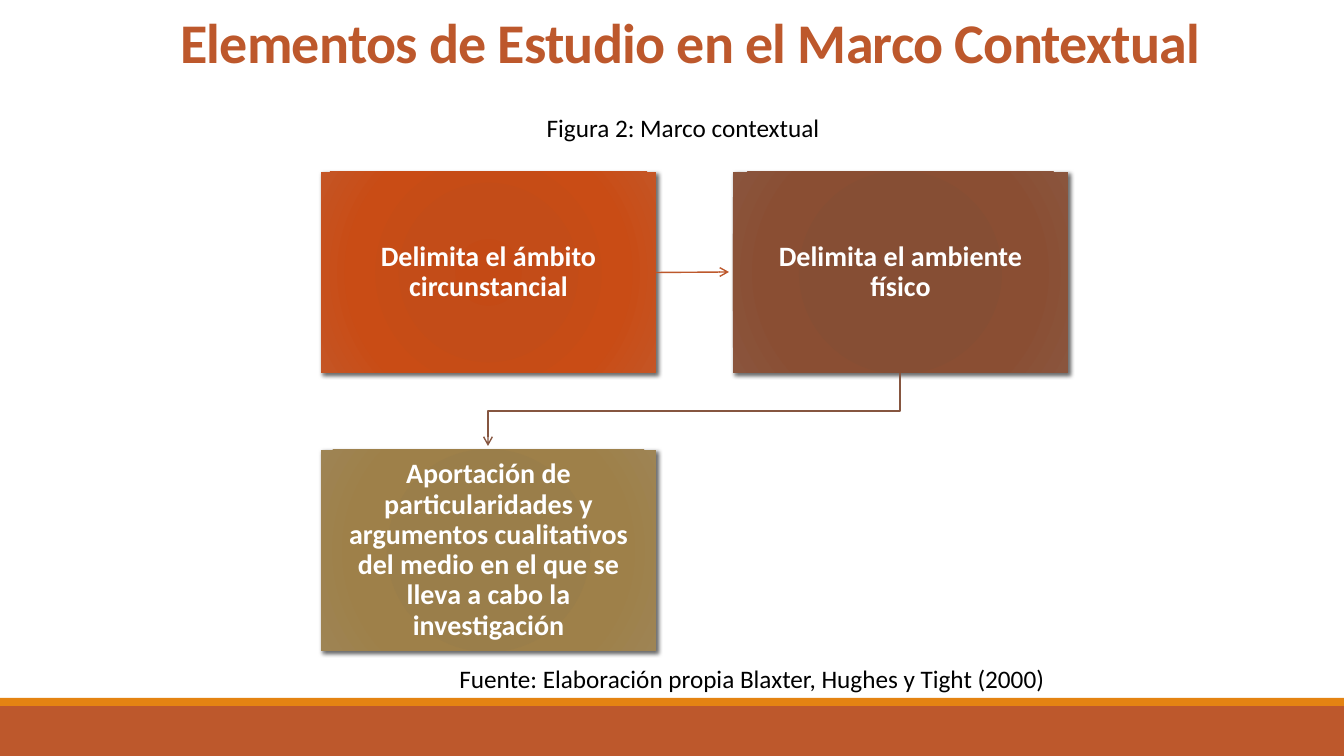
from lxml import etree
from pptx import Presentation
from pptx.dml.color import RGBColor
from pptx.enum.shapes import MSO_CONNECTOR, MSO_SHAPE
from pptx.enum.text import MSO_ANCHOR, MSO_AUTO_SIZE, PP_ALIGN
from pptx.oxml import parse_xml
from pptx.oxml.ns import nsdecls, qn
from pptx.util import Pt

WIDTH, HEIGHT = 1344, 756
SCALE = 12192000 / WIDTH
COLORS = {
    "rust": "BD582C", "orange": "E48312", "brown": "865640",
    "white": "FFFFFF", "black": "000000",
}
GRADIENTS = {
    "red": ("C44A15", "C34C18", "C94C15", "C45525"),
    "brown": ("874C32", "864E34", "8A4E33", "8A553D"),
    "olive": ("9A7D48", "9A7E4A", "9E8049", "9E8454"),
}
STOPS = (0, 34, 70, 100)
STEPS = (
    ("Delimita el ámbito circunstancial", "red"),
    ("Delimita el ambiente físico", "brown"),
    ("Aportación de particularidades y argumentos cualitativos del medio "
     "en el que se lleva a cabo la investigación", "olive"),
)
STEP_WIDTH, STEP_HEIGHT, COLUMN_PITCH, ROW_PITCH = 335, 201, 412, 278
ARROW_GAP = 4


def px(value):
    return round(value * SCALE)


def place(shape, box):
    for name, value in zip(("left", "top", "width", "height"), box):
        setattr(shape, name, px(value))


def write(shape, text, size, color, bold=False, align=PP_ALIGN.CENTER,
          anchor=MSO_ANCHOR.MIDDLE, spacing=1.0, margins=None):
    """Fill the shape with one formatted paragraph and return its run."""
    frame = shape.text_frame
    frame_format = {"word_wrap": True, "auto_size": MSO_AUTO_SIZE.NONE,
                    "vertical_anchor": anchor}
    if margins is not None:
        for side in ("left", "top", "right", "bottom"):
            frame_format[f"margin_{side}"] = px(margins)
    for name, value in frame_format.items():
        setattr(frame, name, value)
    paragraph = frame.paragraphs[0]
    paragraph.alignment, paragraph.line_spacing = align, spacing
    run = paragraph.add_run()
    run.text = text
    for name, value in {"name": "Calibri", "size": Pt(size), "bold": bold}.items():
        setattr(run.font, name, value)
    run.font.color.rgb = RGBColor.from_string(COLORS[color])
    return run


def add_title(slide, box):
    title = slide.shapes.title
    place(title, box)
    run = write(title, "Elementos de Estudio en el Marco Contextual", 40, "rust", bold=True,
                align=PP_ALIGN.LEFT, anchor=MSO_ANCHOR.BOTTOM, spacing=0.85)
    run.font._element.set("spc", "-50")


def add_caption(slide, box, text):
    caption = slide.shapes.add_textbox(*map(px, box))
    write(caption, text, 18, "black")


def add_footer(slide, box):
    left, top, width, height = box
    stripe = 8
    bands = (("rust", top + stripe, height - stripe), ("orange", top, stripe))
    for color, band_top, band_height in bands:
        band = slide.shapes.add_shape(
            MSO_SHAPE.RECTANGLE, *map(px, (left, band_top, width, band_height)))
        band.shadow.inherit = False
        band.fill.solid()
        band.fill.fore_color.rgb = RGBColor.from_string(COLORS[color])
        band.line.fill.background()


def apply_gradient(shape, colors):
    """Give the shape a circular gradient and a soft diagonal shadow."""
    shape.fill.background()
    properties = shape._element.spPr
    stops = "".join(
        f'<a:gs pos="{stop * 1000}"><a:srgbClr val="{color}"/></a:gs>'
        for stop, color in zip(STOPS, colors))
    gradient = parse_xml(
        f'<a:gradFill {nsdecls("a")} rotWithShape="1"><a:gsLst>{stops}</a:gsLst>'
        '<a:path path="circle"><a:fillToRect l="100000" t="100000" r="100000" b="100000"/>'
        '</a:path></a:gradFill>')
    properties.replace(properties.find(qn("a:noFill")), gradient)
    shape.shadow.inherit = False
    properties.find(qn("a:effectLst")).append(parse_xml(
        f'<a:outerShdw {nsdecls("a")} blurRad="{Pt(3)}" dist="{Pt(2)}" dir="2700000" '
        'algn="br" rotWithShape="0"><a:srgbClr val="000000"><a:alpha val="60000"/>'
        '</a:srgbClr></a:outerShdw>'))


def add_step(slide, box, text, gradient):
    step = slide.shapes.add_shape(MSO_SHAPE.RECTANGLE, *map(px, box))
    step.line.fill.background()
    apply_gradient(step, GRADIENTS[gradient])
    write(step, text, 20, "white", bold=True, spacing=0.9, margins=16)
    return step


def style_arrow(arrow, color):
    arrow.line.color.rgb = RGBColor.from_string(COLORS[color])
    arrow.line.width = Pt(1)
    etree.SubElement(arrow.line._get_or_add_ln(), qn("a:tailEnd"), type="arrow")


def add_diagram(slide, box):
    """Place the steps two to a row and link them in reading order."""
    left, top = box
    steps = []
    for index, (text, gradient) in enumerate(STEPS):
        row, column = divmod(index, 2)
        step_box = (left + column * COLUMN_PITCH, top + row * ROW_PITCH,
                    STEP_WIDTH, STEP_HEIGHT)
        steps.append(add_step(slide, step_box, text, gradient))

    middle = top + STEP_HEIGHT // 2
    across = slide.shapes.add_connector(
        MSO_CONNECTOR.STRAIGHT, px(left + STEP_WIDTH), px(middle),
        px(left + COLUMN_PITCH - ARROW_GAP), px(middle))
    across.begin_connect(steps[0], 3)
    style_arrow(across, "rust")
    etree.SubElement(across._element.spPr, qn("a:effectLst"))

    end_x = left + STEP_WIDTH // 2
    start_x = end_x + COLUMN_PITCH
    start_y = top + STEP_HEIGHT
    turn_y = top + (STEP_HEIGHT + ROW_PITCH) // 2
    builder = slide.shapes.build_freeform(start_x, start_y, scale=SCALE)
    builder.add_line_segments(
        [(start_x, turn_y), (end_x, turn_y), (end_x, top + ROW_PITCH - ARROW_GAP)], close=False)
    down = builder.convert_to_shape()
    down.fill.background()
    down.shadow.inherit = False
    style_arrow(down, "brown")


def main():
    presentation = Presentation()
    presentation.slide_width, presentation.slide_height = px(WIDTH), px(HEIGHT)
    slide = presentation.slides.add_slide(presentation.slide_layouts[5])
    add_footer(slide, (0, 698, WIDTH, 58))
    add_title(slide, (170, -80, 1109, 160))
    add_diagram(slide, (321, 172))
    add_caption(slide, (338, 107, 690, 40), "Figura 2: Marco contextual")
    add_caption(slide, (407, 658, 690, 40),
                "Fuente: Elaboración propia Blaxter, Hughes y Tight (2000)")
    presentation.save("out.pptx")


if __name__ == "__main__":
    main()
